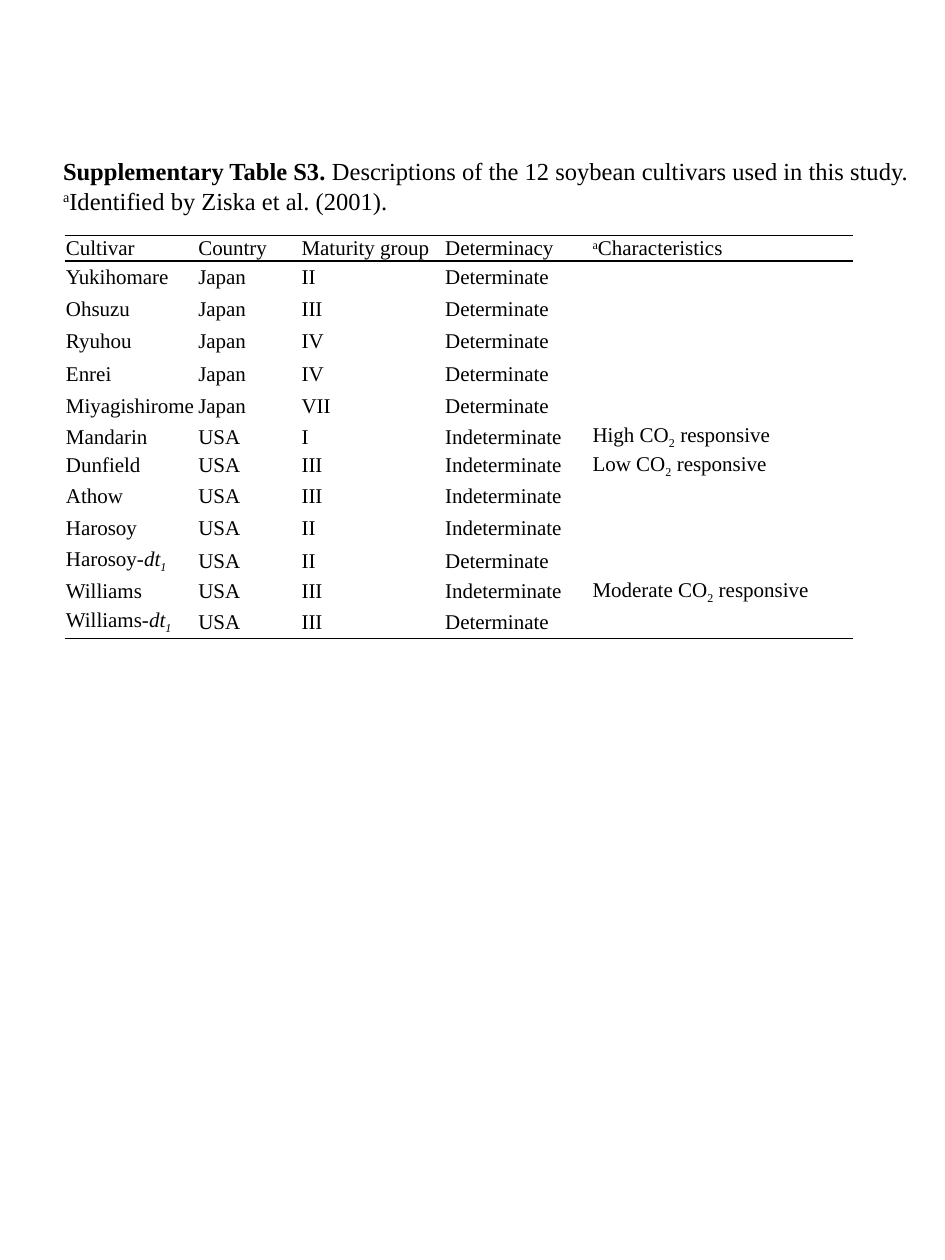
from lxml.etree import SubElement as Sub, Element as Elem
from pptx import Presentation
from pptx.dml.color import RGBColor as RGB
from pptx.enum.text import MSO_ANCHOR as Anchor, MSO_AUTO_SIZE as Auto, PP_ALIGN as Align
from pptx.oxml.ns import qn
from pptx.util import Inches, Pt

WIDE, HIGH = 7.5, 10
FONT = "Times New Roman"
INK = {"text": "000000", "rule": "000000"}
PLAIN = "{2D5ABB26-0587-4C30-8999-92F81FD0307C}"  # table style without grid

COLS = [1.05, 0.82, 1.14, 1.17, 2.08]
ROWS = [0.2] + [0.19] * 5 + [0.2, 0.2, 0.19, 0.19, 0.2, 0.2, 0.21]
BLANK = 15.4  # text size that sets the height of rows with an empty cell

# Styles of a run: bold, italic, baseline shift in thousandths of a percent
BOLD, ITAL = {"b": "1"}, {"i": "1"}
SUP, SUB = {"baseline": "30000"}, {"baseline": "-25000"}

CAPTION = [
    [("Supplementary Table S3. ", BOLD),
     ("Descriptions of the 12 soybean cultivars used in this study.", {})],
    [("a", SUP), ("Identified by Ziska et al. (2001).", {})],
]


def co2(level):
    return [(level + " CO", {}), ("2", SUB), (" responsive", {})]


def mutant(name):
    return [(name + "-", {}), ("dt", ITAL), ("1", {**ITAL, **SUB})]


DET, IND = "Determinate", "Indeterminate"
DATA = [
    ("Cultivar", "Country", "Maturity group", "Determinacy",
     [("a", SUP), ("Characteristics", {})]),
    ("Yukihomare", "Japan", "II", DET, ""),
    ("Ohsuzu", "Japan", "III", DET, ""),
    ("Ryuhou", "Japan", "IV", DET, ""),
    ("Enrei", "Japan", "IV", DET, ""),
    ("Miyagishirome", "Japan", "VII", DET, ""),
    ("Mandarin", "USA", "I", IND, co2("High")),
    ("Dunfield", "USA", "III", IND, co2("Low")),
    ("Athow", "USA", "III", IND, ""),
    ("Harosoy", "USA", "II", IND, ""),
    (mutant("Harosoy"), "USA", "II", DET, ""),
    ("Williams", "USA", "III", IND, co2("Moderate")),
    (mutant("Williams"), "USA", "III", DET, ""),
]


def write(para, runs, size):
    for text, style in runs:
        run = para.add_run()
        run.text = text
        font = run.font
        font.name, font.size = FONT, Pt(size)
        font.bold = font.italic = False
        font.color.rgb = RGB.from_string(INK["text"])
        for key, val in style.items():
            font._element.set(key, val)


def rule(cell, sides):
    props = cell._tc.get_or_add_tcPr()
    for pos, side in enumerate(sides):
        line = Elem(qn("a:ln" + side), w=str(Pt(1)))
        fill = Sub(line, qn("a:solidFill"))
        Sub(fill, qn("a:srgbClr"), val=INK["rule"])
        props.insert(pos, line)


def fill_cell(cell, item):
    cell.fill.background()
    cell.vertical_anchor = Anchor.MIDDLE
    cell.margin_left = cell.margin_right = Inches(0.01)
    cell.margin_top = cell.margin_bottom = 0
    para = cell.text_frame.paragraphs[0]
    if item:
        write(para, [(item, {})] if isinstance(item, str) else item, 12)
    else:
        end = Sub(para._p, qn("a:endParaRPr"), sz=str(round(BLANK * 100)))
        Sub(end, qn("a:latin"), typeface=FONT)


def add_grid(slide):
    frame = slide.shapes.add_table(
        len(ROWS), len(COLS), Inches(WIDE * 0.0685), Inches(HIGH * 0.187),
        Inches(sum(COLS)), Inches(sum(ROWS)))
    grid = frame.table
    grid.first_row = grid.horz_banding = False
    for mark in frame._element.iter(qn("a:tableStyleId")):
        mark.text = PLAIN
    for col, width in zip(grid.columns, COLS):
        col.width = Inches(width)
    # Rules above and below the header, and under the last row
    edges = {0: "TB", len(ROWS) - 1: "B"}
    for num, (row, height, items) in enumerate(zip(grid.rows, ROWS, DATA)):
        row.height = Inches(height)
        for cell, item in zip(row.cells, items):
            fill_cell(cell, item)
            rule(cell, edges.get(num, ""))


def add_title(slide):
    title = slide.shapes.title
    title.left, title.top = Inches(0.4), Inches(HIGH * 0.119)
    title.width, title.height = Inches(7.03), Inches(0.57)
    frame = title.text_frame
    frame.word_wrap = True
    frame.auto_size = Auto.SHAPE_TO_FIT_TEXT
    frame.vertical_anchor = Anchor.TOP
    for num, runs in enumerate(CAPTION):
        para = frame.add_paragraph() if num else frame.paragraphs[0]
        para.alignment = Align.JUSTIFY
        write(para, runs, 14)


def main():
    deck = Presentation()
    deck.slide_width, deck.slide_height = Inches(WIDE), Inches(HIGH)
    slide = deck.slides.add_slide(deck.slide_layouts[5])
    add_grid(slide)
    add_title(slide)
    deck.save("out.pptx")


if __name__ == "__main__":
    main()
